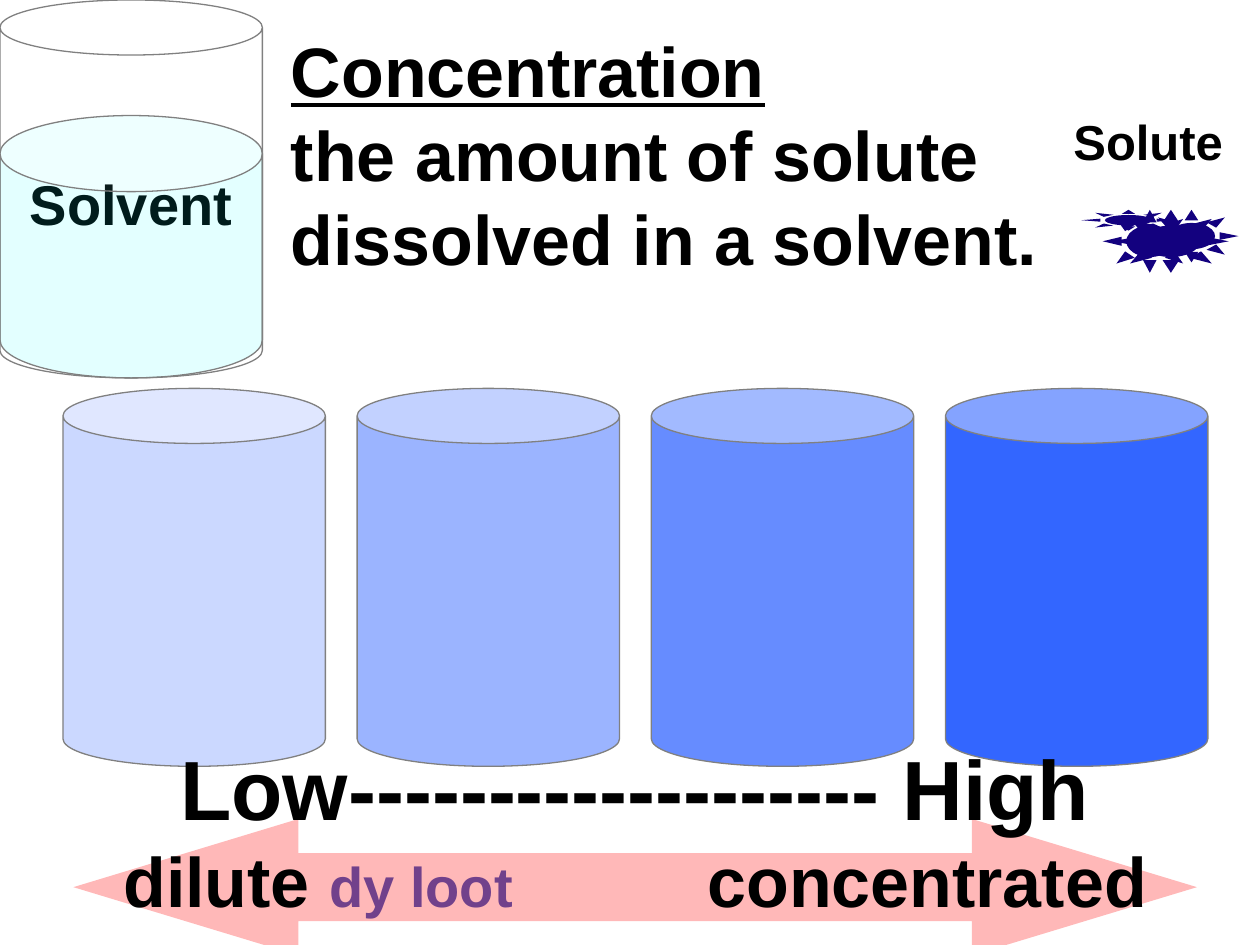
import pptx
import pptx.dml.color
import pptx.enum.shapes
import pptx.enum.text
import pptx.util
from lxml import etree
from pptx.oxml.ns import qn

Cm = pptx.util.Cm
Pt = pptx.util.Pt
Preset = pptx.enum.shapes.MSO_SHAPE
Anchor = pptx.enum.text.MSO_ANCHOR
Align = pptx.enum.text.PP_ALIGN

BLACK, BLUE, NAVY = "000000", "3366FF", "13017F"


def color(hex_string):
    return pptx.dml.color.RGBColor.from_string(hex_string)


class SlideBuilder:
    font = "Arial"
    outline = "808080"

    def __init__(self, slide):
        self.slide = slide

    def run(self, paragraph, text, size, ink=BLACK, underline=False, spacing=0):
        """Add one bold run; spacing is extra points after each character."""
        run = paragraph.add_run()
        run.text = text
        run.font.name = self.font
        run.font.size = Pt(size)
        run.font.bold = True
        run.font.underline = underline
        run.font.color.rgb = color(ink)
        if spacing:
            run._r.get_or_add_rPr().set("spc", str(spacing * 100))

    def placeholder(self, index, box, text, size, underline=False):
        holder = self.slide.placeholders[index]
        holder.left, holder.top, holder.width, holder.height = map(Cm, box)
        frame = holder.text_frame
        frame.word_wrap = True
        frame.auto_size = pptx.enum.text.MSO_AUTO_SIZE.NONE
        frame.vertical_anchor = Anchor.TOP
        paragraph = frame.paragraphs[0]
        paragraph.alignment = Align.LEFT
        paragraph.space_before = Pt(0)
        properties = paragraph._p.get_or_add_pPr()
        properties.set("marL", "0")
        properties.set("indent", "0")
        etree.SubElement(properties, qn("a:buNone"))
        self.run(paragraph, text, size, underline=underline)

    def label(self, box, text, size):
        frame = self.slide.shapes.add_textbox(*map(Cm, box)).text_frame
        frame.word_wrap = False
        self.run(frame.paragraphs[0], text, size)

    def shape(self, preset, box, fill, opacity=100, adjustments=(), outlined=False):
        shape = self.slide.shapes.add_shape(preset, *map(Cm, box))
        shape.shadow.inherit = False
        for position, value in enumerate(adjustments):
            shape.adjustments[position] = value
        shape.fill.solid()
        shape.fill.fore_color.rgb = color(fill)
        if opacity < 100:
            tint = shape.fill._xPr.find(".//" + qn("a:srgbClr"))
            etree.SubElement(tint, qn("a:alpha")).set("val", str(opacity * 1000))
        if outlined:
            shape.line.color.rgb = color(self.outline)
            shape.line.width = Pt(0.75)
        else:
            shape.line.fill.background()
        return shape

    def cylinder(self, box, fill, opacity, rim=0.21):
        return self.shape(Preset.CAN, box, fill, opacity, [rim], outlined=True)

    def caption(self, shape, lines, anchor=Anchor.MIDDLE):
        """Write centred lines in a shape; each line is a list of run arguments."""
        frame = shape.text_frame
        frame.word_wrap = False
        frame.vertical_anchor = anchor
        for number, line in enumerate(lines):
            paragraph = frame.add_paragraph() if number else frame.paragraphs[0]
            paragraph.alignment = Align.CENTER
            for text, size, *style in line:
                self.run(paragraph, text, size, *style)


def main():
    deck = pptx.Presentation()
    deck.slide_width, deck.slide_height = Cm(25.4), Cm(19.05)
    page = SlideBuilder(deck.slides.add_slide(deck.slide_layouts[1]))

    page.placeholder(0, (5.61, 0.43, 16.61, 1.7), "Concentration", 40, underline=True)
    page.placeholder(1, (5.61, 2.13, 16.61, 3.64),
                     "the amount of solute dissolved in a solvent.", 40)

    beaker_width, beaker_height = 5.29, 7.62
    for step, opacity in enumerate((25, 49, 75, 100)):
        page.cylinder((1.27 + 5.93 * step, 7.83, beaker_width, beaker_height), BLUE, opacity)

    solvent = page.cylinder((0, 0, beaker_width, beaker_height), "FFFFFF", 25)
    page.caption(solvent, [[("Solvent", 32)]])

    page.label((21.39, 2.12, 3.53, 1.45), "Solute", 28)
    for left, width, height in ((21.8, 1.9, 0.42), (23.07, 1.9, 1.06),
                                (22.23, 1.9, 1.27), (22.44, 2.33, 1.27)):
        page.shape(Preset.SUN, (left, 4.23, width, height), NAVY, adjustments=[0.25])

    scale = page.shape(Preset.LEFT_RIGHT_ARROW, (1.48, 16.51, 22.65, 2.75),
                       "FF0000", 28, [0.5, 1.65])
    page.caption(scale, [
        [("Low------------------- High", 48)],
        [("dilute ", 40), ("dy loot", 32, "71418B"),
         (" ", 40, BLACK, False, 100), ("concentrated", 40)],
    ], Anchor.BOTTOM)
    scale.text_frame.margin_bottom = 0

    page.cylinder((0, 2.33, beaker_width, 5.29), "00FFFF", 11, rim=0.29)
    deck.save("out.pptx")


if __name__ == "__main__":
    main()
